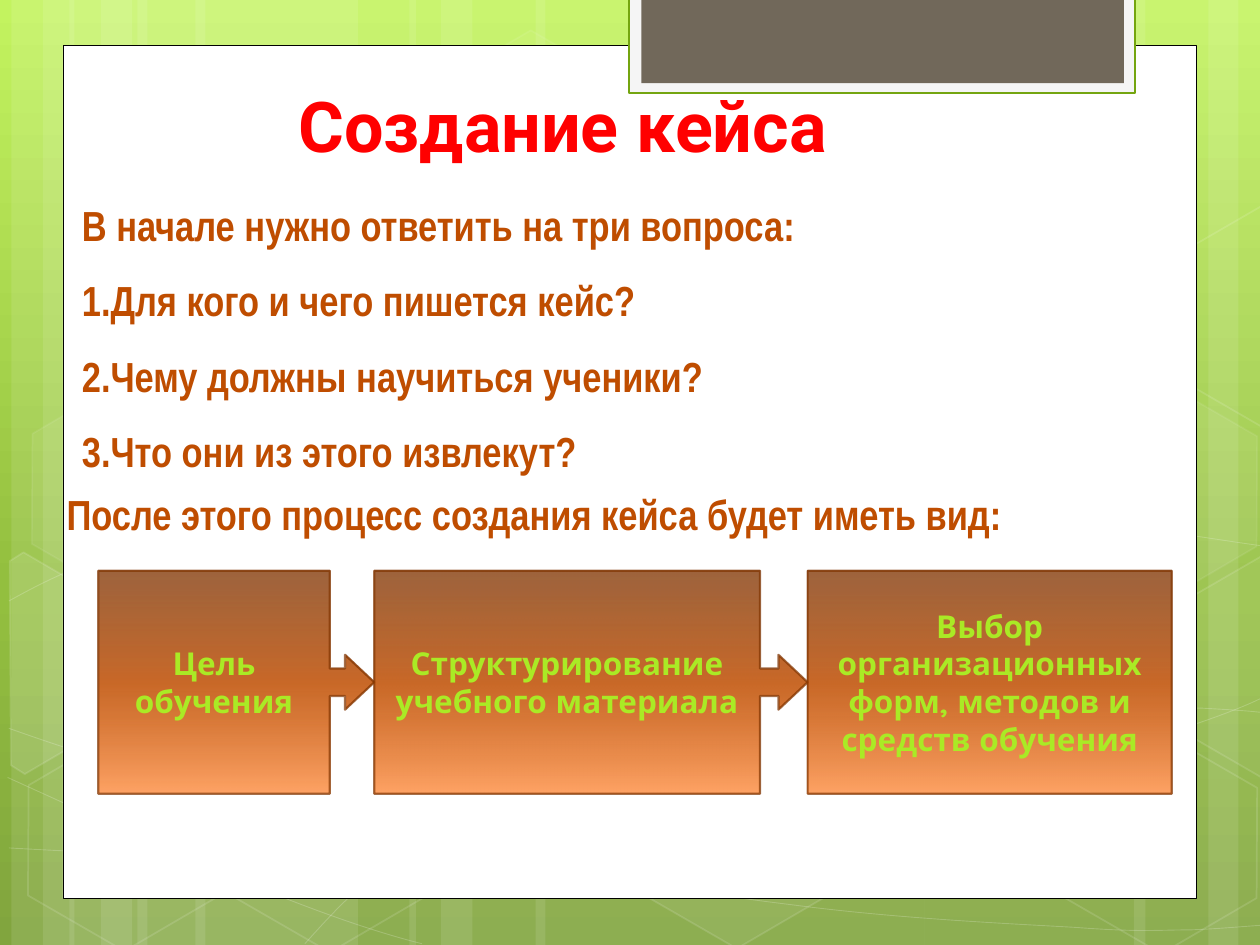
from math import cos, radians, sin
from typing import NamedTuple, Optional

from lxml import etree
from pptx import Presentation
from pptx.dml.color import RGBColor
from pptx.enum.shapes import MSO_SHAPE
from pptx.enum.text import MSO_ANCHOR, MSO_AUTO_SIZE, PP_ALIGN
from pptx.oxml.ns import qn
from pptx.util import Pt

RECT = MSO_SHAPE.RECTANGLE
HEX = MSO_SHAPE.HEXAGON
CALLOUT = MSO_SHAPE.RIGHT_ARROW_CALLOUT
LEFT, CENTER = PP_ALIGN.LEFT, PP_ALIGN.CENTER
TOP, MIDDLE, BOTTOM = MSO_ANCHOR.TOP, MSO_ANCHOR.MIDDLE, MSO_ANCHOR.BOTTOM
FIXED = MSO_AUTO_SIZE.NONE
PX = 9144
WIDE, HIGH = 1000, 750
WHITE, RUST, BROWN = "FFFFFF", "BF4D00", "803400"
TILT = 30


class Box(NamedTuple):
    x: int
    y: int
    w: int
    h: int


class Paint(NamedTuple):
    fill: Optional[str] = None
    alpha: int = 100
    line: Optional[str] = None
    width: float = 1
    fade: int = 100


class Stop(NamedTuple):
    pos: int
    color: str
    alpha: int = 100


class Type(NamedTuple):
    face: str
    size: int
    color: str


class Cell(NamedTuple):
    x: int
    y: int
    fill: int
    fade: int


class Shard(NamedTuple):
    hub: tuple
    points: list
    fill: int


class Step(NamedTuple):
    text: str
    w: int
    body: Optional[float] = None


SKY = [Stop(0, "C3F35F"), Stop(62, "93BF3F"), Stop(100, "81A53E")]
CLAY = [Stop(0, "FFA466"), Stop(50, RUST, 84), Stop(100, BROWN, 76)]
HEAD = Type("Roboto", 40, "FF0000")
TEXT = Type("Arial Narrow", 24, RUST)
LABEL = Type("Quicksand", 18, "AAEA25")

STRIPS = [(109, 175), (9, 50), (34, 83), (155, 175), (55, 50), (80, 83),
          (734, 175), (959, 50), (900, 83), (425, 309), (325, 50), (350, 83)]
CURVES = [
    [(7, 673), (61, 676), (115, 679), (190, 678), (265, 677), (358, 675), (458, 665),
     (558, 655), (700, 636), (792, 617), (883, 598), (977, 568), (1007, 551)],
    [(7, 477), (36, 461), (65, 446), (121, 431), (178, 416), (259, 394), (347, 387),
     (436, 380), (544, 379), (654, 387), (764, 395), (947, 426), (1007, 434)],
    [(6, 617), (127, 672), (247, 727), (335, 749)],
    [(7, 578), (38, 589), (70, 600), (128, 616), (186, 631), (273, 656), (357, 673),
     (440, 690), (545, 708), (628, 718), (711, 729), (800, 733), (853, 736),
     (906, 740), (919, 738), (945, 738), (971, 737), (989, 735), (1007, 734)],
    [(242, 749), (260, 729), (278, 709), (302, 691), (326, 672), (360, 653), (388, 639),
     (416, 625), (433, 619), (469, 609), (506, 599), (573, 585), (608, 578),
     (644, 571), (649, 571), (680, 569), (711, 566), (760, 563), (794, 562),
     (829, 561), (886, 562), (886, 562), (908, 562), (931, 562), (953, 562),
     (971, 563), (988, 564), (997, 565), (1006, 566), (1003, 565), (1006, 566)],
]
CELLS = [Cell(334, 36, 4, 8), Cell(497, 589, 6, 12), Cell(11, 591, 0, 12),
         Cell(14, 312, 7, 8), Cell(174, 592, 0, 12), Cell(753, 453, 10, 12),
         Cell(834, 593, 0, 12), Cell(834, 314, 7, 8)]
SHARDS = [
    Shard((36, 536), [(8, 445), (19, 438), (96, 483), (95, 570), (20, 614), (9, 607)], 10),
    Shard((985, 520), [(926, 485), (1002, 441), (1009, 446), (1009, 613), (1002, 617),
                       (926, 573)], 4),
    Shard((985, 241), [(926, 207), (1002, 163), (1010, 168), (1009, 335), (1002, 339),
                       (926, 295)], 0),
]
PANELS = [(Box(50, 36, 900, 677), Paint(WHITE, line="000000", width=0.5)),
          (Box(499, -2, 402, 76), Paint("F5F5F5", line="74A510", width=1.25)),
          (Box(509, -2, 383, 68), Paint("71685A"))]
LINES = ["В начале нужно ответить на три вопроса:", "Для кого и чего пишется кейс?",
         "Чему должны научиться ученики?", "Что они из этого извлекут?"]
FLOW = [Step("Цель обучения", 219, 0.839),
        Step("Структурирование учебного материала", 344, 0.89),
        Step("Выбор организационных форм, методов и средств обучения", 289)]


def color(code: str) -> RGBColor:
    return RGBColor.from_string(code)


def thin(root, alpha: int) -> None:
    if alpha < 100:
        tint = root.find(".//" + qn("a:srgbClr"))
        etree.SubElement(tint, qn("a:alpha"), val=str(alpha * 1000))


def blend(root, fill, stops: list[Stop], angle: int) -> None:
    fill.gradient()
    fill.gradient_angle = angle
    items = root.find(".//" + qn("a:gsLst"))
    for item in list(items):
        items.remove(item)
    for stop in stops:
        item = etree.SubElement(items, qn("a:gs"), pos=str(stop.pos * 1000))
        etree.SubElement(item, qn("a:srgbClr"), val=stop.color)
        thin(item, stop.alpha)


def coat(shape, paint: Paint) -> None:
    shape.shadow.inherit = False
    if paint.fill:
        shape.fill.solid()
        shape.fill.fore_color.rgb = color(paint.fill)
        thin(shape.element.spPr, paint.alpha)
    else:
        shape.fill.background()
    if paint.line:
        shape.line.color.rgb = color(paint.line)
        shape.line.width = Pt(paint.width)
        thin(shape.element.spPr.find(qn("a:ln")), paint.fade)
    else:
        shape.line.fill.background()


def block(slide, kind, box: Box, paint: Paint):
    shape = slide.shapes.add_shape(kind, *(n * PX for n in box))
    coat(shape, paint)
    return shape


def trace(slide, points: list, closed: bool, paint: Paint):
    spots = [(x * PX, y * PX) for x, y in points]
    pen = slide.shapes.build_freeform(*spots[0])
    pen.add_line_segments(spots[1:], close=closed)
    shape = pen.convert_to_shape()
    coat(shape, paint)
    return shape


def bend(shape) -> None:
    legs = list(shape.element.iter(qn("a:lnTo")))
    for i in range(0, len(legs), 3):
        curve = etree.Element(qn("a:cubicBezTo"))
        legs[i].addprevious(curve)
        for leg in legs[i:i + 3]:
            curve.append(leg[0])
            leg.getparent().remove(leg)


def turn(point: tuple, hub: tuple) -> tuple:
    x, y = point[0] - hub[0], point[1] - hub[1]
    c, s = cos(radians(TILT)), sin(radians(TILT))
    return hub[0] + x * c + y * s, hub[1] - x * s + y * c


def place(shape, box: Box) -> None:
    shape.left, shape.top, shape.width, shape.height = (n * PX for n in box)
    shape.element.getparent().append(shape.element)


def write(shape, lines: list[str], style: Type, align, anchor, lead: float = 1) -> None:
    frame = shape.text_frame
    frame.text = "\n".join(lines)
    frame.word_wrap = True
    frame.auto_size = FIXED
    frame.vertical_anchor = anchor
    for para in frame.paragraphs:
        para.alignment = align
        para.line_spacing = lead
        para.space_before = Pt(0)
        font = para.font
        font.name, font.size, font.bold = style.face, Pt(style.size), True
        font.color.rgb = color(style.color)


def dent(para, left: int, first: int) -> None:
    props = para._p.get_or_add_pPr()
    props.set("marL", str(left * PX))
    props.set("indent", str(first * PX))


def count(frame) -> None:
    for i, para in enumerate(frame.paragraphs):
        dent(para, 0, 0)
        mark = etree.Element(qn("a:buAutoNum" if i else "a:buNone"))
        if i:
            mark.set("type", "arabicPeriod")
        para._p.pPr.find(qn("a:defRPr")).addprevious(mark)


def scene(slide) -> None:
    blend(slide.element, slide.background.fill, SKY, 270)
    for x, w in STRIPS:
        block(slide, RECT, Box(x, 0, w, HIGH), Paint(WHITE, 10))
    for knots in CURVES:
        bend(trace(slide, knots, False, Paint(line=WHITE, width=0.5, fade=20)))
    for cell in CELLS:
        paint = Paint(WHITE if cell.fill else None, cell.fill, WHITE, 1, cell.fade)
        shape = block(slide, HEX, Box(cell.x, cell.y, 175, 152), paint)
        shape.adjustments[0] = 0.285
        shape.rotation = TILT
    for hub, points, alpha in SHARDS:
        paint = Paint(WHITE if alpha else None, alpha, WHITE, 1, 12)
        trace(slide, [turn(p, hub) for p in points], True, paint).rotation = TILT
    for box, paint in PANELS:
        block(slide, RECT, box, paint)


def chain(slide) -> None:
    x = 78
    for step in FLOW:
        kind = CALLOUT if step.body else RECT
        paint = Paint(line=BROWN, width=1.25, fade=70)
        shape = block(slide, kind, Box(x, 453, step.w, 177), paint)
        blend(shape.element, shape.fill, CLAY, 90)
        if step.body:
            for i, ratio in enumerate((0.123, 0.123, 0.131, step.body)):
                shape.adjustments[i] = ratio
        write(shape, [step.text], LABEL, CENTER, MIDDLE)
        x += step.w


def main() -> None:
    deck = Presentation()
    deck.slide_width, deck.slide_height = WIDE * PX, HIGH * PX
    slide = deck.slides.add_slide(deck.slide_layouts[1])
    scene(slide)
    title, body = slide.shapes.title, slide.placeholders[1]
    place(title, Box(227, 55, 578, 82))
    write(title, ["Создание кейса"], HEAD, LEFT, BOTTOM)
    place(body, Box(55, 133, 886, 250))
    write(body, LINES, TEXT, LEFT, TOP, 1.5)
    count(body.text_frame)
    note = slide.shapes.add_textbox(*(n * PX for n in Box(43, 383, 929, 50)))
    write(note, ["После этого процесс создания кейса будет иметь вид:"], TEXT, LEFT, TOP)
    dent(note.text_frame.paragraphs[0], 38, -38)
    chain(slide)
    deck.save("out.pptx")


if __name__ == "__main__":
    main()
